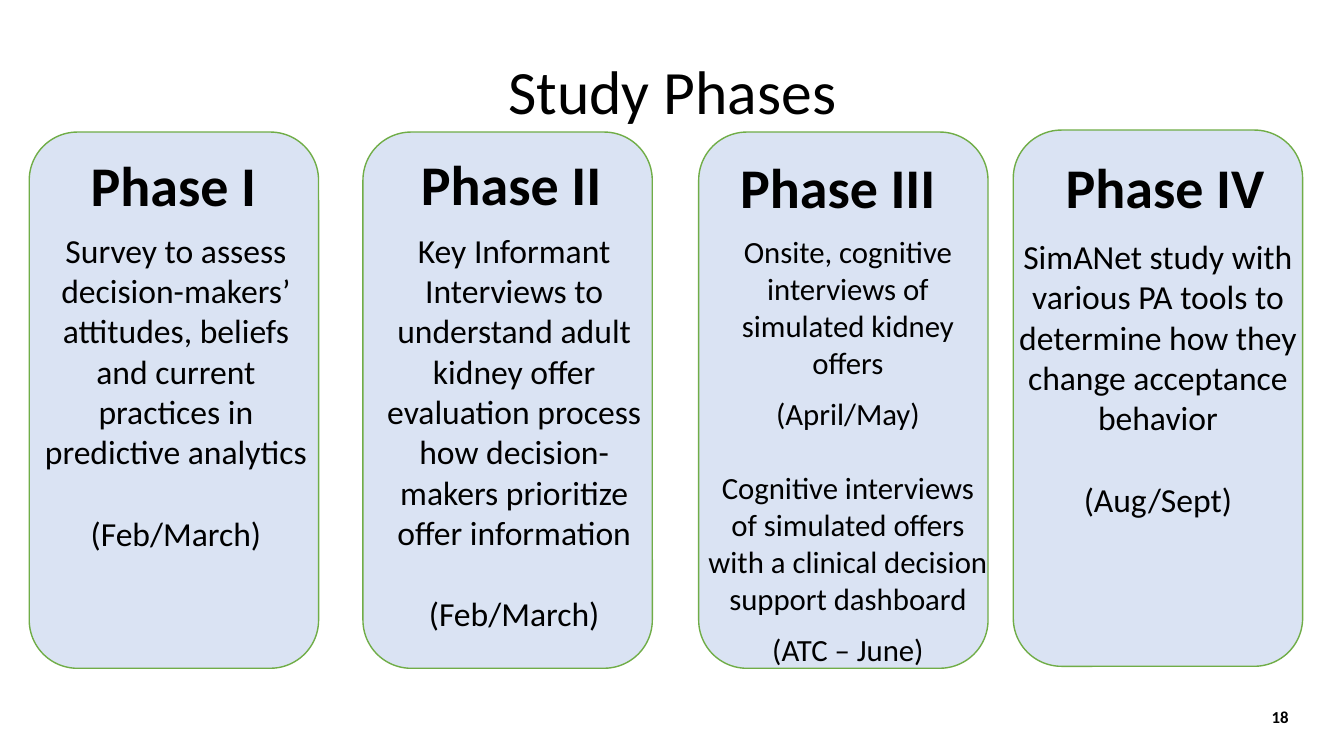
"""Build the Study Phases slide: four phase cards under a centred title."""
from dataclasses import dataclass

from pptx import Presentation
from pptx.dml.color import RGBColor
from pptx.enum import shapes, text
from pptx.util import Emu, Pt

PX = 9144
BLACK = RGBColor(0x00, 0x00, 0x00)
WHITE = RGBColor(0xFF, 0xFF, 0xFF)
CARD_FILL = RGBColor(0xDA, 0xE3, 0xF3)
CARD_LINE = RGBColor(0x70, 0xAD, 0x47)
FONT = "Calibri"
CARD_W, CARD_H = 287, 532
HEADING_H = 77
LINE_GAP = 29.3
SHORT_GAP = 9.8


@dataclass(frozen=True)
class Box:
    """Position and size in px."""
    left: int
    top: int
    width: int
    height: int

    def emu(self) -> tuple[Emu, ...]:
        """Return left, top, width and height in EMU."""
        return tuple(Emu(v * PX) for v in (self.left, self.top, self.width, self.height))


@dataclass(frozen=True)
class Line:
    """One paragraph with the space before it in points."""
    words: str
    before: float = 0


@dataclass(frozen=True)
class Style:
    """Look of the text in a box."""
    size: int
    bold: bool = False
    align: text.PP_ALIGN = text.PP_ALIGN.CENTER
    anchor: text.MSO_ANCHOR = text.MSO_ANCHOR.TOP
    side_inset: int = 10
    indent: int = 0
    spacing: float = 1.0


@dataclass(frozen=True)
class Phase:
    """A card with its heading and body."""
    left: int
    top: int
    name: str
    heading: Box
    body: Box
    lines: tuple[Line, ...]
    size: int = 24
    indent: int = 7


PHASES = (
    Phase(29, 131, "Phase I", Box(36, 144, 272, HEADING_H), Box(29, 223, 279, 414), (
        Line("Survey to assess decision-makers’ attitudes, beliefs and current "
             "practices in predictive analytics"),
        Line("(Feb/March)", LINE_GAP)), indent=12),
    Phase(360, 131, "Phase II", Box(371, 143, 272, HEADING_H), Box(365, 223, 283, 414), (
        Line("Key Informant Interviews to understand adult kidney offer evaluation "
             "process how decision-makers prioritize offer information"),
        Line("(Feb/March)", LINE_GAP))),
    Phase(693, 131, "Phase III", Box(718, 146, 226, HEADING_H), Box(694, 226, 287, 444), (
        Line("Onsite, cognitive interviews of simulated kidney offers"),
        Line("(April/May)", SHORT_GAP),
        Line("Cognitive interviews of simulated offers with a clinical decision "
             "support dashboard", 26.9),
        Line("(ATC – June)", SHORT_GAP)), size=22),
    Phase(1005, 129, "Phase IV", Box(1041, 146, 229, HEADING_H), Box(1002, 229, 286, 333), (
        Line("SimANet study with various PA tools to determine how they change "
             "acceptance behavior"),
        Line("(Aug/Sept)", LINE_GAP))),
)


def add_text(s, box: Box, lines: tuple[Line, ...], style: Style) -> None:
    """Add a wrapped text box holding the lines."""
    tf = s.shapes.add_textbox(*box.emu()).text_frame
    tf.word_wrap = True
    tf.vertical_anchor = style.anchor
    tf.margin_left = tf.margin_right = Emu(style.side_inset * PX)
    for i, line in enumerate(lines):
        p = tf.add_paragraph() if i else tf.paragraphs[0]
        p.text = line.words
        p.alignment = style.align
        p.line_spacing = style.spacing
        if line.before:
            p.space_before = Pt(line.before)
        if style.indent:
            p._p.get_or_add_pPr().set("marL", str(style.indent * PX))
        for r in p.runs:
            r.font.name = FONT
            r.font.size = Pt(style.size)
            r.font.bold = style.bold
            r.font.color.rgb = BLACK


def add_phase(s, phase: Phase) -> None:
    """Draw one phase card."""
    sp = s.shapes.add_shape(shapes.MSO_SHAPE.ROUNDED_RECTANGLE,
                            *Box(phase.left, phase.top, CARD_W, CARD_H).emu())
    sp.shadow.inherit = False
    sp.fill.solid()
    sp.fill.fore_color.rgb = CARD_FILL
    sp.line.color.rgb = CARD_LINE
    sp.line.width = Pt(1)
    add_text(s, phase.heading, (Line(phase.name),), Style(40, bold=True))
    add_text(s, phase.body, phase.lines,
             Style(phase.size, side_inset=0, indent=phase.indent))


def main() -> None:
    """Build and save the slide."""
    prs = Presentation()
    prs.slide_width, prs.slide_height = Emu(1333 * PX), Emu(750 * PX)
    s = prs.slides.add_slide(prs.slide_layouts[6])
    s.background.fill.solid()
    s.background.fill.fore_color.rgb = WHITE
    add_text(s, Box(92, 21, 1150, 145), (Line("Study Phases"),),
             Style(44, anchor=text.MSO_ANCHOR.MIDDLE, spacing=0.9))
    add_text(s, Box(988, 691, 300, 40), (Line("18"),),
             Style(12, bold=True, align=text.PP_ALIGN.RIGHT, anchor=text.MSO_ANCHOR.MIDDLE))
    for phase in PHASES:
        add_phase(s, phase)
    prs.save("out.pptx")


if __name__ == "__main__":
    main()
